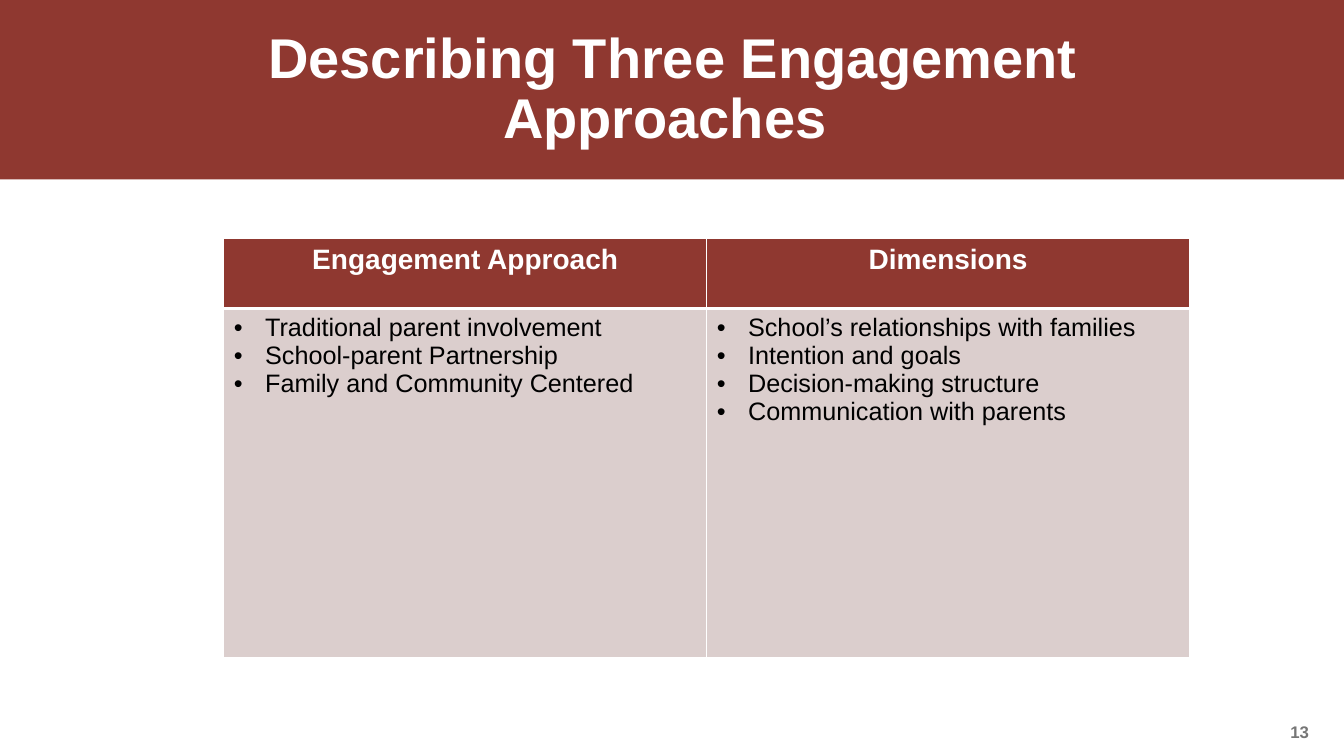
from dataclasses import dataclass

from lxml.etree import SubElement
from pptx import Presentation
from pptx.dml.color import RGBColor
from pptx.enum.shapes import MSO_SHAPE as Shape
from pptx.enum.text import MSO_ANCHOR as Anchor, MSO_AUTO_SIZE as AutoSize, PP_ALIGN as Align
from pptx.oxml import parse_xml
from pptx.oxml.ns import nsdecls, qn
from pptx.util import Inches, Pt


@dataclass(frozen=True)
class Theme:
    font: str = "Arial"
    brand: str = "8F3830"
    tint: str = "DBCECD"
    light: str = "FFFFFF"
    dark: str = "000000"
    muted: str = "767676"
    title_size: int = 40
    header_size: int = 20
    body_size: int = 18
    number_size: int = 12
    thin_rule: int = 1
    thick_rule: int = 3


class SlideBuilder:
    def __init__(self, page, theme):
        self.page = page
        self.theme = theme

    def style(self, para, size, color, bold=True):
        for span in para.runs:
            span.font.name = self.theme.font
            span.font.size = Pt(size)
            span.font.bold = bold
            span.font.color.rgb = RGBColor.from_string(color)

    def title(self, text, left, top, width, height):
        box = self.page.shapes.title
        box.left, box.top = Inches(left), Inches(top)
        box.width, box.height = Inches(width), Inches(height)
        frame = box.text_frame
        frame.text = text
        frame.word_wrap = True
        frame.auto_size = AutoSize.NONE
        frame.vertical_anchor = Anchor.MIDDLE
        para = frame.paragraphs[0]
        para.alignment = Align.CENTER
        para.line_spacing = 0.9
        self.style(para, self.theme.title_size, self.theme.light)

    def title_band(self, width, height):
        """Draw the coloured band behind the title."""
        band = self.page.shapes.add_shape(Shape.RECTANGLE, 0, 0, Inches(width), Inches(height))
        band.shadow.inherit = False
        band.fill.solid()
        band.fill.fore_color.rgb = RGBColor.from_string(self.theme.brand)
        band.line.fill.background()
        self.page.shapes.title.element.addprevious(band.element)

    def page_number(self, text, left, top, width, height):
        box = self.page.shapes.add_textbox(Inches(left), Inches(top), Inches(width), Inches(height))
        frame = box.text_frame
        frame.text = text
        frame.word_wrap = True
        frame.vertical_anchor = Anchor.MIDDLE
        self.style(frame.paragraphs[0], self.theme.number_size, self.theme.muted)

    def table(self, columns, left, top, column_width, row_heights):
        """Draw a header row over one bulleted list per column."""
        theme = self.theme
        grid = self.page.shapes.add_table(
            len(row_heights), len(columns), Inches(left), Inches(top),
            Inches(column_width * len(columns)), Inches(sum(row_heights))).table
        for row, height in zip(grid.rows, row_heights):
            row.height = Inches(height)
        for index, (heading, items) in enumerate(columns.items()):
            grid.columns[index].width = Inches(column_width)
            header, body = grid.cell(0, index), grid.cell(1, index)
            header.text = heading
            para = header.text_frame.paragraphs[0]
            para.alignment = Align.CENTER
            self.style(para, theme.header_size, theme.light)
            self.finish_cell(header, theme.brand, bottom=theme.thick_rule)

            body.text = "\n".join(items)
            for para in body.text_frame.paragraphs:
                self.add_bullet(para)
                self.style(para, theme.body_size, theme.dark, bold=False)
            self.finish_cell(body, theme.tint, top=theme.thick_rule)

    def add_bullet(self, para):
        props = para._p.get_or_add_pPr()
        props.set("marL", str(Inches(0.31)))
        props.set("indent", str(Inches(-0.31)))
        color = SubElement(props, qn("a:buClr"))
        SubElement(color, qn("a:srgbClr"), val=self.theme.dark)
        SubElement(props, qn("a:buFont"), typeface=self.theme.font)
        SubElement(props, qn("a:buChar"), char="•")

    def finish_cell(self, cell, fill, top=None, bottom=None):
        """Set the fill and the four borders; borders precede the fill in the XML."""
        cell.fill.solid()
        cell.fill.fore_color.rgb = RGBColor.from_string(fill)
        props = cell._tc.get_or_add_tcPr()
        widths = {"lnL": None, "lnR": None, "lnT": top, "lnB": bottom}
        for position, (side, width) in enumerate(widths.items()):
            props.insert(position, parse_xml(
                f'<a:{side} {nsdecls("a")} w="{Pt(width or self.theme.thin_rule)}">'
                f'<a:solidFill><a:srgbClr val="{self.theme.light}"/></a:solidFill></a:{side}>'))


def main():
    deck = Presentation()
    deck.slide_width, deck.slide_height = Inches(13.33), Inches(7.5)
    title_only = deck.slide_layouts[5]
    builder = SlideBuilder(deck.slides.add_slide(title_only), Theme())

    builder.title_band(13.33, 1.78)
    builder.title("Describing Three Engagement Approaches ", 0.92, 0.17, 11.5, 1.45)
    builder.page_number("13", 12.7, 7.13, 0.64, 0.25)
    builder.table({
        "Engagement Approach": [
            "Traditional parent involvement",
            "School-parent Partnership",
            "Family and Community Centered",
        ],
        "Dimensions": [
            "School’s relationships with families",
            "Intention and goals",
            "Decision-making structure",
            "Communication with parents",
        ],
    }, left=2.22, top=2.37, column_width=4.79, row_heights=[0.69, 3.46])
    deck.save("out.pptx")


if __name__ == "__main__":
    main()
